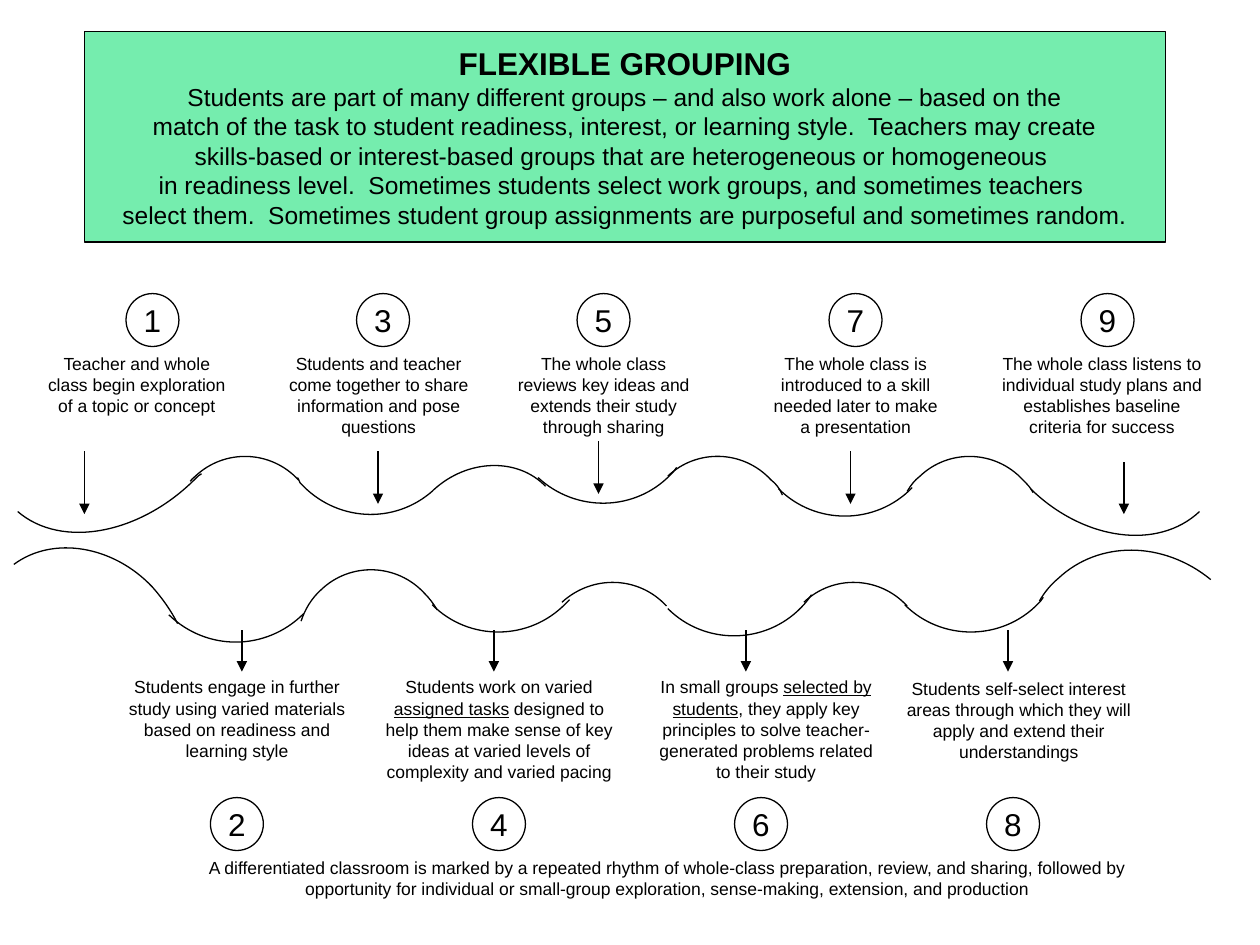
from math import cos, radians, sin

from lxml.etree import SubElement
from pptx import Presentation
from pptx.dml.color import RGBColor
from pptx.enum.shapes import MSO_CONNECTOR, MSO_SHAPE
from pptx.enum.text import MSO_ANCHOR, MSO_AUTO_SIZE, PP_ALIGN
from pptx.oxml.ns import qn
from pptx.util import Inches, Pt

BLACK, WHITE, GREEN = "000000", "FFFFFF", "75EDAE"
DIAMETER = 0.42
CREST, TROUGH = 317, 134.6

HEADING = "FLEXIBLE GROUPING"
INTRO = [
    "Students are part of many different groups – and also work alone – based on the",
    " match of the task to student readiness, interest, or learning style.  Teachers may create ",
    "skills-based or interest-based groups that are heterogeneous or homogeneous ",
    "in readiness level.  Sometimes students select work groups, and sometimes teachers ",
    "select them.  Sometimes student group assignments are purposeful and sometimes random.",
]
SUMMARY = ("A differentiated classroom is marked by a repeated rhythm of whole-class preparation, "
           "review, and sharing, followed by opportunity for individual or small-group exploration, "
           "sense-making, extension, and production")

STEPS = [
    (1, 1, (0.25, 2.75, 1.67, 0.6), (0.67, 3.58, 4.08),
     "Teacher and whole class begin exploration of a topic or concept"),
    (3, 2.83, (2.17, 2.75, 1.67, 0.77), (3, 3.58, 4),
     "Students and teacher come together to share information and pose questions"),
    (5, 4.58, (4, 2.75, 1.58, 0.77), (4.75, 3.5, 3.92),
     "The whole class reviews key ideas and extends their study through sharing"),
    (7, 6.58, (6, 2.75, 1.58, 0.77), (6.75, 3.58, 4),
     "The whole class is introduced to a skill needed later to make a presentation"),
    (9, 8.58, (7.83, 2.75, 1.83, 0.77), (8.92, 3.67, 4.08),
     "The whole class listens to individual study plans and establishes baseline criteria for success"),
    (2, 1.67, (0.92, 5.32, 1.92, 0.77), (1.92, 5, 5.33),
     "Students engage in further study using varied materials based on readiness and learning style"),
    (4, 3.75, (2.92, 5.32, 2.08, 0.93), (3.92, 5, 5.33),
     "Students work on varied _assigned tasks_ designed to help them make sense of key ideas "
     "at varied levels of complexity and varied pacing"),
    (6, 5.83, (5.08, 5.32, 2, 0.93), (5.92, 5, 5.33),
     "In small groups _selected by students_, they apply key principles to solve "
     "teacher-generated problems related to their study"),
    (8, 7.83, (7, 5.33, 2.17, 0.77), (8, 5, 5.33),
     "Students self-select interest areas through which they will apply and extend their understandings"),
]

UPPER_WAVE = [
    ((1.62, 3.52, 0.64, 0.58), CREST,
     [(1.51, 3.82), (1.52, 3.81), (1.53, 3.79), (1.55, 3.78), (1.78, 3.56), (2.15, 3.57), (2.37, 3.81)]),
    ((3.55, 3.58, 0.67, 0.58), CREST, [(3.44, 3.89), (3.71, 3.64), (4.11, 3.63), (4.33, 3.86)]),
    ((5.47, 3.48, 0.59, 0.73), CREST,
     [(5.3, 3.78), (5.53, 3.56), (5.9, 3.57), (6.12, 3.81), (6.16, 3.84), (6.19, 3.88), (6.21, 3.93)]),
    ((7.33, 3.54, 0.74, 0.71), CREST,
     [(7.2, 3.9), (7.23, 3.85), (7.26, 3.81), (7.3, 3.78), (7.53, 3.56), (7.9, 3.57), (8.12, 3.81),
      (8.15, 3.84), (8.18, 3.87), (8.2, 3.91)]),
    ((2.52, 3.44, 0.75, 0.8), 138.6,
     [(3.44, 3.89), (3.13, 4.17), (2.66, 4.14), (2.38, 3.83), (2.37, 3.81), (2.37, 3.8), (2.36, 3.79)]),
    ((4.4, 3.37, 0.83, 0.75), TROUGH,
     [(5.37, 3.71), (5.36, 3.73), (5.34, 3.75), (5.32, 3.77), (5.04, 4.06), (4.57, 4.07), (4.27, 3.79)]),
    ((6.33, 3.5, 0.75, 0.75), TROUGH, [(7.24, 3.87), (6.95, 4.17), (6.47, 4.17), (6.18, 3.88)]),
    ((8.44, 3.42, 0.84, 1.08), TROUGH, [(9.52, 4.06), (9.19, 4.37), (8.6, 4.29), (8.18, 3.88)]),
    ((0.23, 3.46, 1.24, 0.87), TROUGH,
     [(1.6, 3.76), (1.58, 3.77), (1.57, 3.78), (1.56, 3.79), (1.12, 4.24), (0.49, 4.36), (0.14, 4.06)]),
]
LOWER_WAVE = [
    ((2.47, 4.48, 0.88, 0.75), CREST,
     [(2.39, 4.93), (2.42, 4.84), (2.47, 4.75), (2.55, 4.68), (2.78, 4.46), (3.15, 4.47), (3.37, 4.71),
      (3.41, 4.75), (3.44, 4.79), (3.47, 4.84)]),
    ((4.58, 4.5, 0.59, 0.58), CREST, [(4.46, 4.78), (4.7, 4.56), (5.07, 4.57), (5.29, 4.81)]),
    ((6.5, 4.5, 0.59, 0.58), CREST, [(6.38, 4.78), (6.61, 4.56), (6.98, 4.57), (7.2, 4.81)]),
    ((0.38, 4.1, 0.75, 1.23), CREST,
     [(0.11, 4.48), (0.42, 4.25), (0.9, 4.33), (1.21, 4.66), (1.29, 4.75), (1.36, 4.85), (1.41, 4.95)]),
    ((8.42, 4.23, 1.11, 0.99), CREST,
     [(8.25, 4.77), (8.29, 4.7), (8.34, 4.64), (8.4, 4.59), (8.72, 4.29), (9.23, 4.29), (9.61, 4.6)]),
    ((1.5, 4.5, 0.75, 0.75), TROUGH, [(2.41, 4.87), (2.11, 5.17), (1.64, 5.17), (1.34, 4.88)]),
    ((3.58, 4.4, 0.79, 0.75), TROUGH,
     [(4.52, 4.76), (4.51, 4.77), (4.5, 4.78), (4.49, 4.79), (4.2, 5.09), (3.72, 5.09), (3.43, 4.8)]),
    ((5.43, 4.4, 0.88, 0.75), TROUGH,
     [(6.44, 4.72), (6.42, 4.75), (6.39, 4.79), (6.36, 4.82), (6.07, 5.12), (5.59, 5.12), (5.3, 4.83)]),
    ((7.32, 4.4, 0.82, 0.75), TROUGH,
     [(8.28, 4.74), (8.27, 4.76), (8.25, 4.78), (8.24, 4.79), (7.95, 5.09), (7.47, 5.09), (7.18, 4.8)]),
]


def rgb(value):
    """Turn a hex string into a colour."""
    return RGBColor.from_string(value)


def apply(target, formats):
    """Set each attribute named in a dict of format values."""
    for name, value in formats.items():
        setattr(target, name, value)


def place(shape, box):
    """Move and size a shape."""
    apply(shape, dict(zip(("left", "top", "width", "height"), map(Inches, box))))


def outline(shape):
    """Give a shape or connector a thin black line."""
    shape.line.color.rgb = rgb(BLACK)
    shape.line.width = Pt(0.75)


def paint(shape, fill):
    """Fill and outline a shape."""
    shape.fill.solid()
    shape.fill.fore_color.rgb = rgb(fill)
    outline(shape)


def write(p, text, **font):
    """Write centred text, underlining the parts between underscores."""
    p.alignment = PP_ALIGN.CENTER
    for i, part in enumerate(text.split("_")):
        r = p.add_run()
        r.text = part
        apply(r.font, {"name": "Arial", **font})
        r.font.color.rgb = rgb(BLACK)
        if i % 2:
            r.font.underline = True


def add_header(s):
    """Format the title placeholder as the green heading box."""
    sp = s.shapes.title
    place(sp, (0.67, 0.25, 8.58, 1.67))
    paint(sp, GREEN)
    tf = sp.text_frame
    apply(tf, {"word_wrap": False, "auto_size": MSO_AUTO_SIZE.NONE, "vertical_anchor": MSO_ANCHOR.MIDDLE})
    write(tf.paragraphs[0], HEADING, size=Pt(18), bold=True)
    for line in INTRO:
        write(tf.add_paragraph(), line, size=Pt(14), bold=False)


def add_circle(s, number, x, y):
    """Add a numbered circle."""
    sp = s.shapes.add_shape(MSO_SHAPE.OVAL, *map(Inches, (x, y, DIAMETER, DIAMETER)))
    sp.shadow.inherit = False
    paint(sp, WHITE)
    tf = sp.text_frame
    apply(tf, {"word_wrap": False, "vertical_anchor": MSO_ANCHOR.MIDDLE})
    write(tf.paragraphs[0], str(number), size=Pt(18))


def add_caption(s, box, text):
    """Add a wrapped, centred text box."""
    tf = s.shapes.add_textbox(*map(Inches, box)).text_frame
    apply(tf, {"word_wrap": True, "auto_size": MSO_AUTO_SIZE.SHAPE_TO_FIT_TEXT})
    write(tf.paragraphs[0], text, size=Pt(10))


def add_arrow(s, x, top, bottom):
    """Add a vertical arrow pointing down."""
    c = s.shapes.add_connector(MSO_CONNECTOR.STRAIGHT, *map(Inches, (x, top, x, bottom)))
    outline(c)
    SubElement(c.line._get_or_add_ln(), qn("a:tailEnd"), type="triangle")
    SubElement(c._element.spPr, qn("a:effectLst"))


def to_local(point, box, angle):
    """Turn a slide point back into the unrotated box."""
    left, top, width, height = box
    dx, dy = point[0] - left - width / 2, point[1] - top - height / 2
    c, n = cos(radians(angle)), sin(radians(angle))
    return Inches(dx * c + dy * n + width / 2), Inches(dy * c - dx * n + height / 2)


def add_arc(s, box, angle, points):
    """Draw joined cubic curves as one open, rotated outline."""
    local = [to_local(point, box, angle) for point in points]
    fb = s.shapes.build_freeform(*local[0])
    fb.add_line_segments([local[-1]], close=False)
    sp = fb.convert_to_shape()
    place(sp, box)
    sp.rotation = angle
    sp.shadow.inherit = False
    sp.fill.background()
    outline(sp)
    outline_path = next(sp._element.iter(qn("a:path")))
    outline_path.clear()
    for name, value in (("w", sp.width), ("h", sp.height), ("fill", "none")):
        outline_path.set(name, str(value))
    groups = [("a:moveTo", local[:1])]
    groups += [("a:cubicBezTo", local[i:i + 3]) for i in range(1, len(local), 3)]
    for tag, group in groups:
        segment = SubElement(outline_path, qn(tag))
        for x, y in group:
            SubElement(segment, qn("a:pt"), x=str(x), y=str(y))


def main():
    """Build the flexible grouping slide."""
    prs = Presentation()
    apply(prs, {"slide_width": Inches(10), "slide_height": Inches(7.5)})
    s = prs.slides.add_slide(prs.slide_layouts[5])
    add_header(s)
    for number, x, box, _, text in STEPS:
        add_circle(s, number, x, 2.33 if number % 2 else 6.33)
        add_caption(s, box, text)
    for arc in UPPER_WAVE + LOWER_WAVE:
        add_arc(s, *arc)
    for step in STEPS:
        add_arrow(s, *step[3])
    add_caption(s, (1.5, 6.75, 7.58, 0.43), SUMMARY)
    prs.save("out.pptx")


if __name__ == "__main__":
    main()
